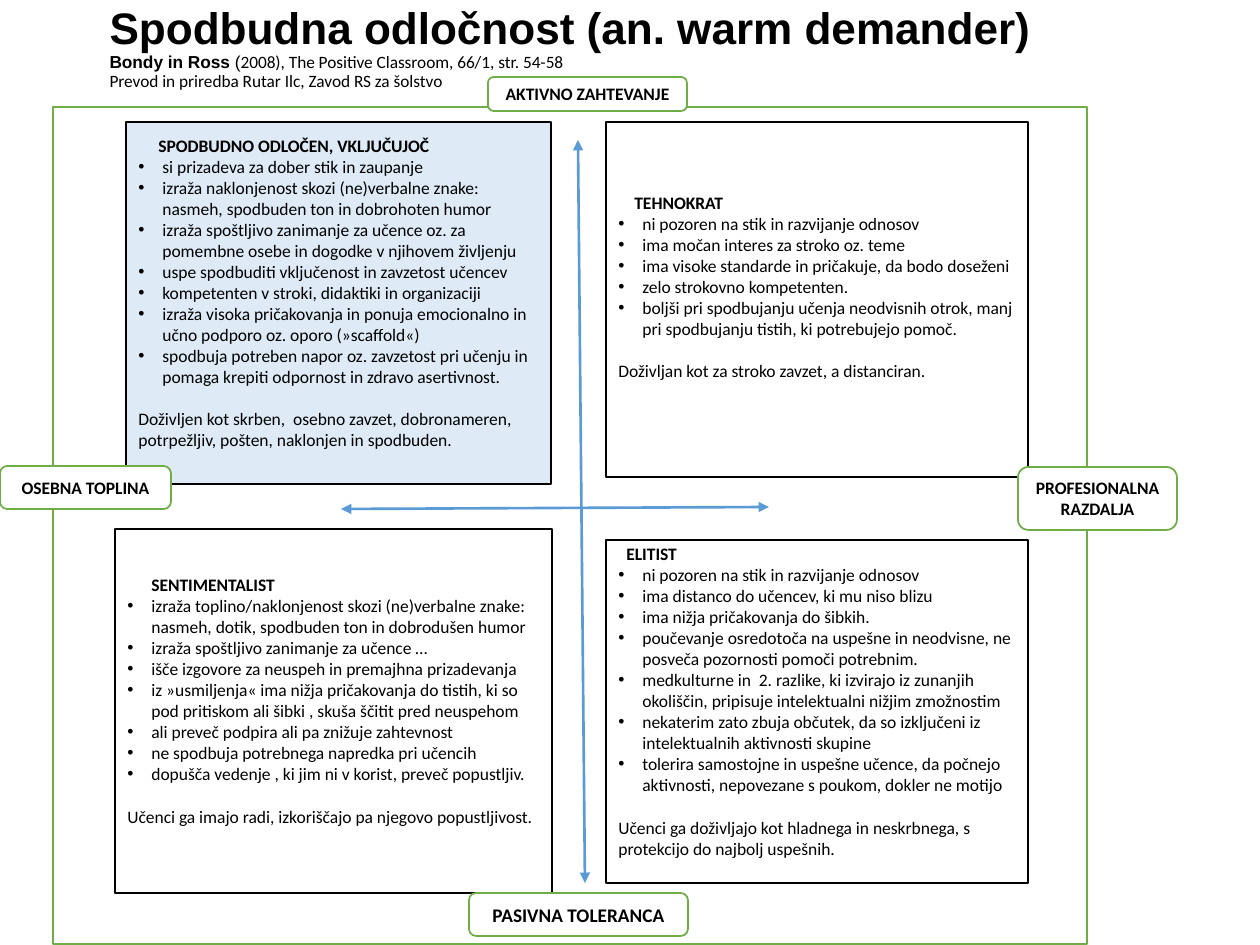
"""Builds the slide on the four teacher types between demand and warmth."""
from lxml.etree import SubElement
from pptx import Presentation
from pptx.dml.color import RGBColor
from pptx.enum.shapes import MSO_CONNECTOR, MSO_SHAPE
from pptx.enum.text import MSO_ANCHOR, MSO_AUTO_SIZE, PP_ALIGN
from pptx.oxml.ns import qn
from pptx.util import Emu, Pt

COLORS = {"ink": "000000", "paper": "FFFFFF", "green": "70AD47", "blue": "5B9BD5", "pale": "DEEBF7"}
PX = 914400 // 126
INDENT = 24
INSET = 6
BLANK_LINE = 12.2

TITLE_BOX = (97, 9, 1163, 79)
TITLE_LINES = [
    [("Spodbudna odločnost (an. warm demander)", "Arial", 25.2, True)],
    [("Bondy in Ross", "Arial", 9.9, True), (" (", "Arial", 9.9, False),
     ("2008), The Positive Classroom, 66/1, str. 54-58", "Calibri", 9.9, False)],
    [("Prevod in priredba Rutar Ilc, Zavod RS za šolstvo", "Calibri", 9.9, False)],
]
FRAME = (53, 107, 1034, 837)
VERTICAL_AXIS = (578, 140, 585, 883)
HORIZONTAL_AXIS = (341, 509, 769, 507)

QUADRANTS = [
    {"place": (126, 122, 425, 362), "fill": "pale", "heading_indent": 20, "room_below": 21,
     "heading": "SPODBUDNO ODLOČEN, VKLJUČUJOČ",
     "points": [
         "si prizadeva za dober stik in zaupanje",
         "izraža naklonjenost skozi (ne)verbalne znake: nasmeh, spodbuden ton in dobrohoten humor",
         "izraža spoštljivo zanimanje za učence oz. za pomembne osebe in dogodke v njihovem življenju",
         "uspe spodbuditi vključenost in zavzetost učencev",
         "kompetenten v stroki, didaktiki in organizaciji",
         "izraža visoka pričakovanja in ponuja emocionalno in učno podporo oz. oporo (»scaffold«)",
         "spodbuja potreben napor oz. zavzetost pri učenju in pomaga krepiti odpornost in zdravo asertivnost."],
     "closing": "Doživljen kot skrben,  osebno zavzet, dobronameren, potrpežljiv, pošten, naklonjen in spodbuden."},
    {"place": (115, 529, 437, 364), "fill": "paper", "heading_indent": 24, "room_below": 21,
     "heading": "SENTIMENTALIST",
     "points": [
         "izraža toplino/naklonjenost skozi (ne)verbalne znake: nasmeh, dotik, spodbuden ton in dobrodušen humor",
         "izraža spoštljivo zanimanje za učence …",
         "išče izgovore za neuspeh in premajhna prizadevanja",
         "iz »usmiljenja« ima nižja pričakovanja do tistih, ki so pod pritiskom ali šibki , skuša ščitit pred neuspehom",
         "ali preveč podpira ali pa znižuje zahtevnost",
         "ne spodbuja potrebnega napredka pri učencih",
         "dopušča vedenje , ki jim ni v korist, preveč popustljiv."],
     "closing": "Učenci ga imajo radi, izkoriščajo pa njegovo popustljivost."},
    {"place": (606, 540, 422, 343), "fill": "paper", "heading_indent": 8, "room_below": 21,
     "heading": "ELITIST",
     "points": [
         "ni pozoren na stik in razvijanje odnosov",
         "ima distanco do učencev, ki mu niso blizu",
         "ima nižja pričakovanja do šibkih.",
         "poučevanje osredotoča na uspešne in neodvisne, ne posveča pozornosti pomoči potrebnim.",
         "medkulturne in  2. razlike, ki izvirajo iz zunanjih okoliščin, pripisuje intelektualni nižjim zmožnostim",
         "nekaterim zato zbuja občutek, da so izključeni iz intelektualnih aktivnosti skupine",
         "tolerira samostojne in uspešne učence, da počnejo aktivnosti, nepovezane s poukom, dokler ne motijo"],
     "closing": "Učenci ga doživljajo kot hladnega in neskrbnega, s protekcijo do najbolj uspešnih."},
    {"place": (606, 122, 422, 355), "fill": "paper", "heading_indent": 16, "room_below": 26,
     "heading": "TEHNOKRAT",
     "points": [
         "ni pozoren na stik in razvijanje odnosov",
         "ima močan interes za stroko oz. teme",
         "ima visoke standarde in pričakuje, da bodo doseženi",
         "zelo strokovno kompetenten.",
         "boljši pri spodbujanju učenja neodvisnih otrok, manj pri spodbujanju tistih, ki potrebujejo pomoč."],
     "closing": "Doživljan kot za stroko zavzet, a distanciran."},
]
AXIS_LABELS = [
    ("AKTIVNO ZAHTEVANJE", (488, 77, 199, 34), 10),
    ("OSEBNA TOPLINA", (0, 466, 171, 43), 10),
    ("PROFESIONALNA RAZDALJA", (1018, 467, 159, 63), 10),
    ("PASIVNA TOLERANCA", (469, 893, 219, 43), 11),
]


def scaled(lengths):
    return [Emu(length * PX) for length in lengths]


def rgb(name):
    return RGBColor.from_string(COLORS[name])


def apply(target, formats):
    for name, value in formats.items():
        setattr(target, name, value)


def add_span(para, text, font="Calibri", size=10, bold=False):
    span = para.add_run()
    span.text = text
    apply(span.font, {"name": font, "size": Pt(size), "bold": bold})
    span.font.color.rgb = rgb("ink")


def add_box(page, kind, place, fill, line):
    box = page.shapes.add_shape(kind, *scaled(place))
    box.shadow.inherit = False
    box.fill.solid()
    box.fill.fore_color.rgb = rgb(fill)
    box.line.color.rgb = rgb(line)
    box.line.width = Pt(1)
    apply(box.text_frame, {"word_wrap": True, "vertical_anchor": MSO_ANCHOR.MIDDLE,
                           "margin_top": INSET * PX, "margin_bottom": INSET * PX})
    return box


def add_axis(page, ends):
    axis = page.shapes.add_connector(MSO_CONNECTOR.STRAIGHT, *scaled(ends))
    axis.line.color.rgb = rgb("blue")
    axis.line.width = Pt(1.5)
    outline = axis.line._get_or_add_ln()
    for end in ("a:headEnd", "a:tailEnd"):
        SubElement(outline, qn(end), type="triangle")
    SubElement(axis._element.spPr, qn("a:effectLst"))


def set_indent(para, left, first=0):
    properties = para._p.get_or_add_pPr()
    properties.set("marL", str(left * PX))
    properties.set("indent", str(first * PX))
    return properties


def add_quadrant(page, quadrant):
    box = add_box(page, MSO_SHAPE.RECTANGLE, quadrant["place"], quadrant["fill"], "ink")
    frame = box.text_frame
    frame.margin_bottom = Emu((INSET + quadrant["room_below"]) * PX)
    heading = frame.paragraphs[0]
    set_indent(heading, quadrant["heading_indent"])
    add_span(heading, quadrant["heading"], bold=True)
    for point in quadrant["points"]:
        para = frame.add_paragraph()
        properties = set_indent(para, INDENT, -INDENT)
        SubElement(properties, qn("a:buFont"), typeface="Arial")
        SubElement(properties, qn("a:buChar"), char="•")
        add_span(para, point)
    closing = frame.add_paragraph()
    closing.space_before = Pt(BLANK_LINE)
    add_span(closing, quadrant["closing"])
    for para in frame.paragraphs:
        para.alignment = PP_ALIGN.LEFT


def fill_title(title):
    apply(title, dict(zip(("left", "top", "width", "height"), scaled(TITLE_BOX))))
    apply(title.text_frame, {"word_wrap": True, "auto_size": MSO_AUTO_SIZE.NONE,
                             "vertical_anchor": MSO_ANCHOR.MIDDLE})
    para = title.text_frame.paragraphs[0]
    apply(para, {"alignment": PP_ALIGN.LEFT, "line_spacing": 0.9})
    for number, spans in enumerate(TITLE_LINES):
        if number:
            para.add_line_break()
        for span in spans:
            add_span(para, *span)


def main():
    deck = Presentation()
    deck.slide_width, deck.slide_height = scaled((1260, 945))
    page = deck.slides.add_slide(deck.slide_layouts[5])
    fill_title(page.shapes.title)
    add_box(page, MSO_SHAPE.RECTANGLE, FRAME, "paper", "green")
    add_axis(page, VERTICAL_AXIS)
    for quadrant in QUADRANTS:
        add_quadrant(page, quadrant)
    for text, place, size in AXIS_LABELS:
        label = add_box(page, MSO_SHAPE.ROUNDED_RECTANGLE, place, "paper", "green")
        para = label.text_frame.paragraphs[0]
        para.alignment = PP_ALIGN.CENTER
        add_span(para, text, size=size, bold=True)
    add_axis(page, HORIZONTAL_AXIS)
    deck.save("out.pptx")


if __name__ == "__main__":
    main()
